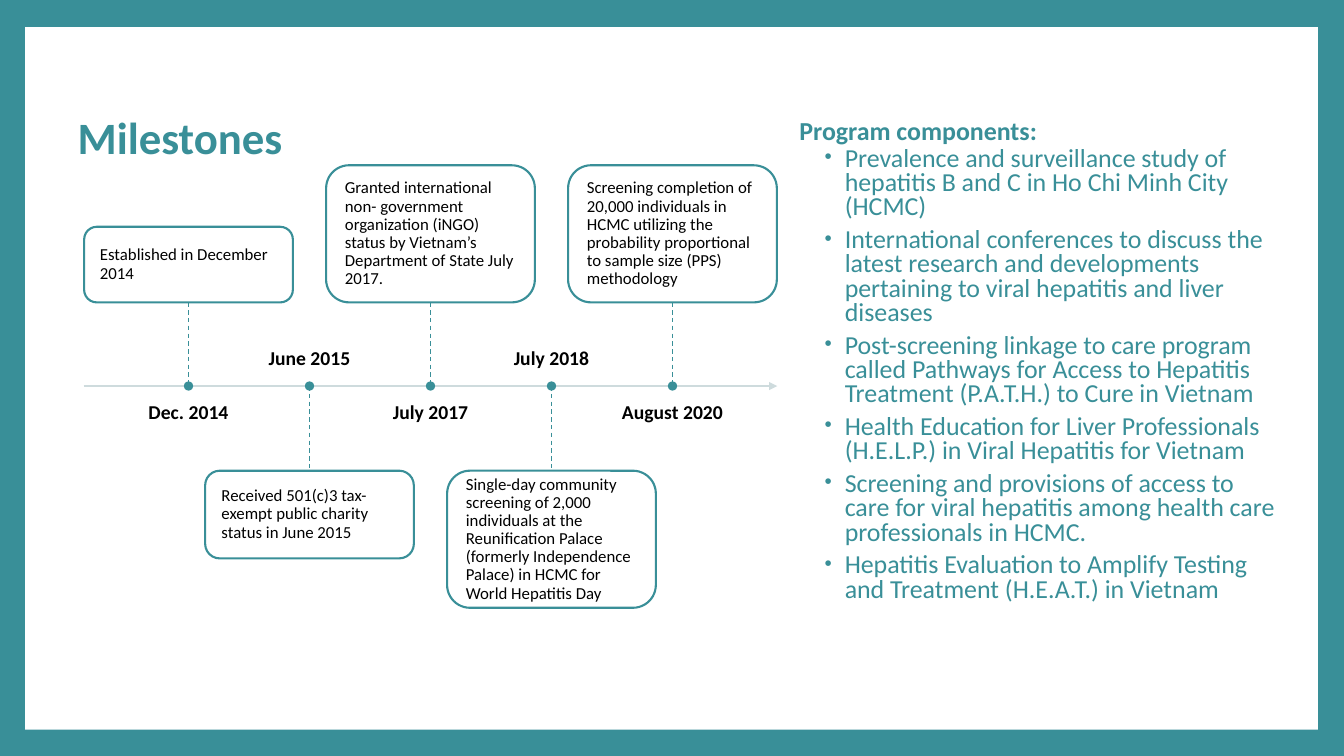
from lxml import etree
from pptx import Presentation
from pptx.dml.color import RGBColor
from pptx.enum import dml, shapes, text
from pptx.oxml import ns
from pptx.util import Inches, Pt

COLORS = {"teal": "398F98", "white": "FFFFFF", "axis": "CEDBDD", "black": "000000"}
RGB = {name: RGBColor.from_string(value) for name, value in COLORS.items()}


def add_run(paragraph, wording, size, color, bold=False):
    run = paragraph.add_run()
    run.text = wording
    run.font.name = "Calibri"
    run.font.size = Pt(size)
    run.font.bold = bold
    run.font.color.rgb = RGB[color]


def add_line(start_x, start_y, end_x, end_y, color, width):
    line = slide.shapes.add_connector(
        shapes.MSO_CONNECTOR.STRAIGHT,
        Inches(start_x), Inches(start_y), Inches(end_x), Inches(end_y))
    line.line.color.rgb = RGB[color]
    line.line.width = Pt(width)
    etree.SubElement(line.element.spPr, ns.qn("a:effectLst"))
    return line


prs = Presentation()
prs.slide_width = Inches(13.33)
prs.slide_height = Inches(7.5)
slide = prs.slides.add_slide(prs.slide_layouts[5])
slide.background.fill.solid()
slide.background.fill.fore_color.rgb = RGB["teal"]

heading = slide.shapes.title
heading.left, heading.top = Inches(0.67), Inches(0.65)
heading.width, heading.height = Inches(10.8), Inches(1.48)
heading.text_frame.vertical_anchor = text.MSO_ANCHOR.MIDDLE
heading_line = heading.text_frame.paragraphs[0]
heading_line.alignment = text.PP_ALIGN.LEFT
heading_line.line_spacing = 0.9
add_run(heading_line, "Milestones", 32, "teal", True)

panel = slide.shapes.add_shape(
    shapes.MSO_SHAPE.RECTANGLE, Inches(0.25), Inches(0.27), Inches(12.82), Inches(6.97))
panel.shadow.inherit = False
panel.fill.solid()
panel.fill.fore_color.rgb = RGB["white"]
panel.line.fill.background()
heading.element.addprevious(panel.element)

AXIS_Y = 3.83
UPPER_BOTTOM = 3.0
LOWER_TOP = 4.67
FIRST_X = 1.87
STEP = 1.2
CARD_WIDTH = 2.07
DATE_WIDTH = 1.82
DOT = 0.07

axis = add_line(0.83, AXIS_Y, 7.71, AXIS_Y, "axis", 1.5)
etree.SubElement(axis.line._get_or_add_ln(), ns.qn("a:tailEnd"), type="triangle")

milestones = [
    ("Dec. 2014", 0.75, "Established in December 2014"),
    ("June 2015", 0.87, "Received 501(c)3 tax-exempt public charity status in June 2015"),
    ("July 2017", 1.36, "Granted international non- government organization (iNGO) status "
                        "by Vietnam’s Department of State July 2017."),
    ("July 2018", 1.36, "Single-day community screening of 2,000 individuals at the "
                        "Reunification Palace (formerly Independence Palace) in HCMC for "
                        "World Hepatitis Day"),
    ("August 2020", 1.36, "Screening completion of 20,000 individuals in HCMC utilizing the "
                          "probability proportional to sample size (PPS) methodology"),
]
for index, (date, card_height, event) in enumerate(milestones):
    x = FIRST_X + index * STEP
    above = index % 2 == 0

    card_top = UPPER_BOTTOM - card_height if above else LOWER_TOP
    card = slide.shapes.add_shape(
        shapes.MSO_SHAPE.ROUNDED_RECTANGLE, Inches(x - CARD_WIDTH / 2), Inches(card_top),
        Inches(CARD_WIDTH), Inches(card_height))
    dot = slide.shapes.add_shape(
        shapes.MSO_SHAPE.OVAL, Inches(x - DOT / 2), Inches(AXIS_Y - DOT / 2),
        Inches(DOT), Inches(DOT))
    for part, color in ((card, "white"), (dot, "teal")):
        part.shadow.inherit = False
        part.fill.solid()
        part.fill.fore_color.rgb = RGB[color]
        part.line.color.rgb = RGB["teal"]
        part.line.width = Pt(1.5)

    stem_ends = (UPPER_BOTTOM, AXIS_Y) if above else (AXIS_Y, LOWER_TOP)
    stem = add_line(x, stem_ends[0], x, stem_ends[1], "teal", 0.79)
    stem.line.dash_style = dml.MSO_LINE.DASH

    label = slide.shapes.add_textbox(
        Inches(x - DATE_WIDTH / 2), Inches(3.99 if above else 3.17),
        Inches(DATE_WIDTH), Inches(0.5))
    label_anchor = text.MSO_ANCHOR.TOP if above else text.MSO_ANCHOR.BOTTOM
    for holder, inset, anchor, align, wording, size, bold in (
            (card, 0.12, text.MSO_ANCHOR.MIDDLE, text.PP_ALIGN.LEFT, event, 12, False),
            (label, 0, label_anchor, text.PP_ALIGN.CENTER, date, 14, True)):
        frame = holder.text_frame
        frame.word_wrap = True
        frame.vertical_anchor = anchor
        frame.margin_left = frame.margin_right = Inches(inset)
        frame.margin_top = frame.margin_bottom = Inches(inset)
        paragraph = frame.paragraphs[0]
        paragraph.alignment = align
        paragraph.line_spacing = 0.9
        add_run(paragraph, wording, size, "black", bold)

components = [
    "Prevalence and surveillance study of hepatitis B and C in Ho Chi Minh City (HCMC)",
    "International conferences to discuss the latest research and developments pertaining "
    "to viral hepatitis and liver diseases",
    "Post-screening linkage to care program called Pathways for Access to Hepatitis "
    "Treatment (P.A.T.H.) to Cure in Vietnam",
    "Health Education for Liver Professionals (H.E.L.P.) in Viral Hepatitis for Vietnam",
    "Screening and provisions of access to care for viral hepatitis among health care "
    "professionals in HCMC.",
    "Hepatitis Evaluation to Amplify Testing and Treatment (H.E.A.T.) in Vietnam",
]
program = slide.shapes.add_textbox(Inches(7.78), Inches(1.15), Inches(4.99), Inches(5.5))
program.text_frame.word_wrap = True
program_title = program.text_frame.paragraphs[0]
program_title.line_spacing = 0.78
program_title._p.get_or_add_pPr().set("marL", str(Inches(0.05)))
add_run(program_title, "Program components:", 18.5, "teal", True)
for component in components:
    item = program.text_frame.add_paragraph()
    item.level = 1
    item.line_spacing = 0.78
    item.space_before = Pt(2)
    item.space_after = Pt(4)
    props = item._p.get_or_add_pPr()
    props.set("marL", str(Inches(0.5)))
    props.set("indent", str(Inches(-0.2)))
    bullet_color = etree.SubElement(props, ns.qn("a:buClr"))
    etree.SubElement(bullet_color, ns.qn("a:srgbClr"), val=COLORS["teal"])
    etree.SubElement(props, ns.qn("a:buSzPct"), val="80000")
    etree.SubElement(props, ns.qn("a:buFont"), typeface="Arial")
    etree.SubElement(props, ns.qn("a:buChar"), char="•")
    add_run(item, component, 18.5, "teal")

prs.save("out.pptx")
